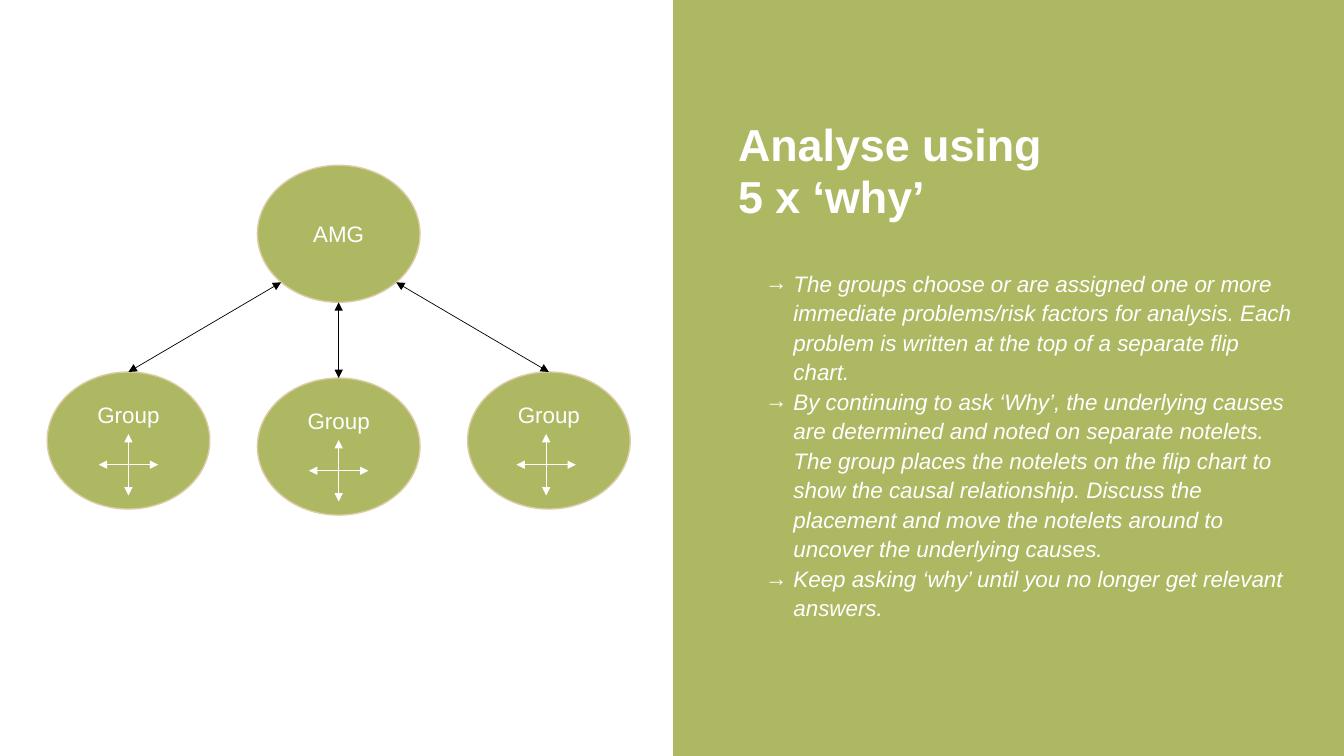
import math

import lxml.etree
import pptx
import pptx.dml.color
import pptx.enum.shapes
import pptx.enum.text
import pptx.oxml.ns
import pptx.util

COLOURS = {"green": "AEB862", "white": "FFFFFF", "sand": "DDCBA4", "black": "000000"}
SHAPES = pptx.enum.shapes.MSO_SHAPE
ANCHOR = pptx.enum.text.MSO_ANCHOR
ALIGN = pptx.enum.text.PP_ALIGN
Pt = pptx.util.Pt

TITLE_TEXT = "Analyse using \v5 x ‘why’"
STEPS = [
    "The groups choose or are assigned one or more immediate problems/risk factors "
    "for analysis. Each problem is written at the top of a separate flip chart.",
    "By continuing to ask ‘Why’, the underlying causes are determined and noted on "
    "separate notelets. The group places the notelets on the flip chart to show the "
    "causal relationship. Discuss the placement and move the notelets around to "
    "uncover the underlying causes.",
    "Keep asking ‘why’ until you no longer get relevant answers.",
]


def colour(name):
    return pptx.dml.color.RGBColor.from_string(COLOURS[name])


def add_element(parent, tag, **attributes):
    return lxml.etree.SubElement(parent, pptx.oxml.ns.qn(tag), attributes)


def set_attributes(target, values):
    for name, value in values.items():
        setattr(target, name, value)


class SlideBuilder:
    """Places elements on a grid of 100 columns by 100 rows."""

    def __init__(self, presentation):
        self.column = presentation.slide_width / 100
        self.row = presentation.slide_height / 100
        self.slide = presentation.slides.add_slide(presentation.slide_layouts[1])
        self.slide.background.fill.solid()
        self.slide.background.fill.fore_color.rgb = colour("green")

    def place(self, left, top, width, height):
        return [round(left * self.column), round(top * self.row),
                round(width * self.column), round(height * self.row)]

    def format_text(self, frame, paragraph_format, font_format):
        for paragraph in frame.paragraphs:
            set_attributes(paragraph, paragraph_format)
            for run in paragraph.runs:
                set_attributes(run.font, {"name": "Arial", **font_format})
                run.font.color.rgb = colour("white")

    def placeholder(self, index, box, text):
        shape = self.slide.placeholders[index]
        names = ("left", "top", "width", "height")
        set_attributes(shape, dict(zip(names, self.place(*box))))
        set_attributes(shape.text_frame, {
            "margin_left": 0, "margin_top": 0, "margin_right": 0, "margin_bottom": 0,
            "word_wrap": True, "vertical_anchor": ANCHOR.TOP,
            "auto_size": pptx.enum.text.MSO_AUTO_SIZE.NONE})
        shape.text_frame.text = text
        return shape.text_frame

    def title(self, box, text):
        frame = self.placeholder(0, box, text)
        self.format_text(frame, {"alignment": ALIGN.LEFT, "line_spacing": Pt(37)},
                         {"size": Pt(32), "bold": True})

    def bullets(self, box, items):
        frame = self.placeholder(1, box, "\n".join(items))
        for paragraph in frame.paragraphs:
            properties = paragraph._p.get_or_add_pPr()
            properties.set("marL", str(pptx.util.Inches(0.55)))
            properties.set("indent", str(pptx.util.Inches(-0.28)))
            add_element(properties, "a:buFont", typeface="Arial")
            add_element(properties, "a:buChar", char="→")
        self.format_text(frame, {"level": 1, "line_spacing": Pt(21.1),
                                 "space_before": Pt(0), "alignment": ALIGN.LEFT},
                         {"size": Pt(16), "italic": True, "bold": False})

    def shape(self, kind, box, fill, line):
        shape = self.slide.shapes.add_shape(kind, *self.place(*box))
        shape.shadow.inherit = False
        shape.fill.solid()
        shape.fill.fore_color.rgb = colour(fill)
        shape.line.color.rgb = colour(line)
        shape.line.width = Pt(1)
        return shape

    def ellipse(self, centre, size, text, bottom_margin=0.08):
        (x, y), (width, height) = centre, size
        box = (x - width / 2, y - height / 2, width, height)
        frame = self.shape(SHAPES.OVAL, box, "green", "sand").text_frame
        margin = pptx.util.Inches(0.08)
        set_attributes(frame, {
            "margin_left": margin, "margin_top": margin, "margin_right": margin,
            "margin_bottom": pptx.util.Inches(bottom_margin),
            "word_wrap": True, "vertical_anchor": ANCHOR.MIDDLE, "text": text})
        self.format_text(frame, {"alignment": ALIGN.CENTER}, {"size": Pt(16)})

    def arrow(self, start, end, line, shapes=None):
        """Draws a thin line with a head at both ends."""
        shapes = shapes or self.slide.shapes
        connector = shapes.add_connector(pptx.enum.shapes.MSO_CONNECTOR.STRAIGHT,
                                         *self.place(*start, *end))
        connector.line.color.rgb = colour(line)
        connector.line.width = Pt(0.5)
        properties = connector._element.spPr
        outline = properties.find(pptx.oxml.ns.qn("a:ln"))
        for tag in ("a:headEnd", "a:tailEnd"):
            add_element(outline, tag, type="triangle")
        add_element(properties, "a:effectLst")

    def cross(self, centre, arm_x, arm_y):
        x, y = centre
        group = self.slide.shapes.add_group_shape()
        self.arrow((x - arm_x, y), (x + arm_x, y), "white", group.shapes)
        self.arrow((x, y - arm_y), (x, y + arm_y), "white", group.shapes)


def main():
    presentation = pptx.Presentation()
    presentation.slide_width = pptx.util.Inches(13.33)
    presentation.slide_height = pptx.util.Inches(7.5)
    builder = SlideBuilder(presentation)

    # White left half, text on the green right half
    builder.shape(SHAPES.RECTANGLE, (0, 0, 50, 100), "white", "white")
    builder.title((54.91, 15.73, 38.41, 14.8), TITLE_TEXT)
    builder.bullets((54.91, 35.33, 41.56, 53.2), STEPS)

    # AMG at the top, three groups below
    size = width, height = 12.1, 18.13
    amg_x, amg_y = 25.2, 30.93
    builder.ellipse((amg_x, amg_y), size, "AMG")

    # Each group: side of AMG, centre row, shift of its cross
    step = 15.64
    for side, group_y, shift in ((-1, 58.27, 0), (0, 59.07, 0), (1, 58.27, -0.2)):
        group_x = amg_x + side * step
        builder.ellipse((group_x, group_y), size, "Group", bottom_margin=0.59)
        builder.cross((group_x + shift, group_y + 3.2), 2.21, 4.07)

        # Arrow leaves AMG at 45 degrees to the side, or straight down
        angle = math.radians(45 * side)
        start = (amg_x + width / 2 * math.sin(angle),
                 amg_y + height / 2 * math.cos(angle))
        builder.arrow(start, (group_x, group_y - height / 2), "black")

    presentation.save("out.pptx")


if __name__ == "__main__":
    main()
